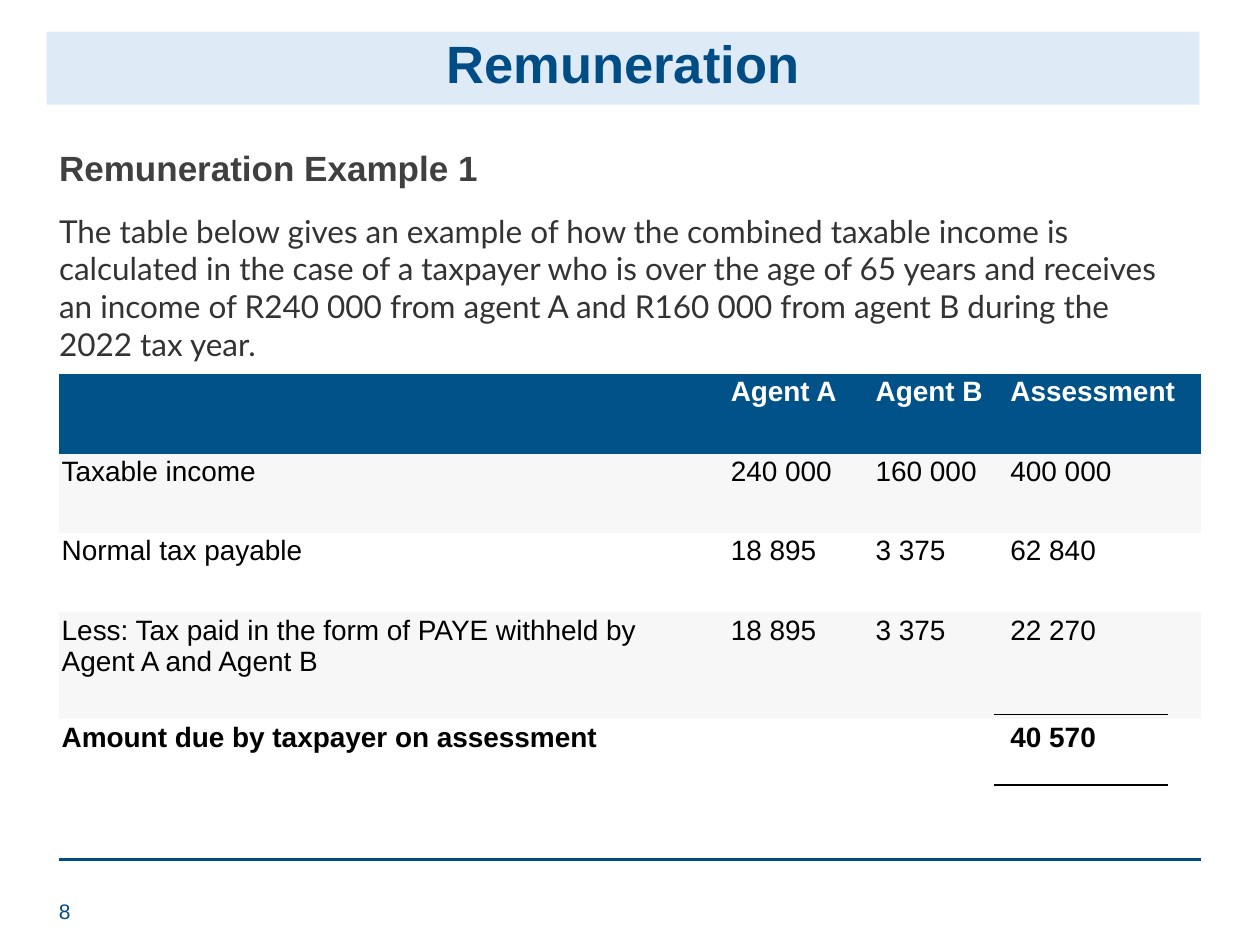
"""Build the Remuneration slide with its worked tax table."""
from dataclasses import dataclass

from lxml.etree import SubElement
from pptx import Presentation
from pptx.dml.color import RGBColor
from pptx.enum.shapes import MSO_CONNECTOR as Connector, MSO_SHAPE as Shape
from pptx.enum.text import MSO_ANCHOR as Anchor, PP_ALIGN as Align
from pptx.oxml.ns import qn
from pptx.slide import Slide
from pptx.text.text import TextFrame
from pptx.util import Inches, Pt

COLORS = {
    "navy": "004C85", "header": "015289", "banner": "DEEBF7", "heading": "404040",
    "body": "333333", "band": "F7F7F7", "white": "FFFFFF", "black": "000000",
}
NO_GRID_STYLE = "{2D5ABB26-0587-4C30-8999-92F81FD0307C}"
COLUMN_WIDTHS = (5.31, 1.15, 1.07, 1.53)
ROW_HEIGHTS = (0.63, 0.63, 0.63, 0.85, 0.63)
CELL_MARGIN = Inches(0.02)


@dataclass
class TextStyle:
    size: float
    color: str
    font: str = "Arial"
    bold: bool = False
    align: Align = Align.LEFT
    anchor: Anchor = Anchor.TOP
    spacing: float = 1.0


@dataclass
class Block:
    text: str
    box: tuple[float, float, float, float]
    style: TextStyle
    fill: str | None = None


@dataclass
class Rule:
    left: float
    right: float
    y: float
    color: str
    weight: float


@dataclass
class TaxRow:
    cells: tuple[str, str, str, str]
    fill: str
    color: str = "black"
    bold: bool = False


BLOCKS = [
    Block("8", (0.37, 7.03, 0.46, 0.4), TextStyle(12, "navy", anchor=Anchor.MIDDLE)),
    Block("The table below gives an example of how the combined taxable income is "
          "calculated in the case of a taxpayer who is over the age of 65 years and "
          "receives an income of R240 000 from agent A and R160 000 from agent B "
          "during the 2022 tax year.",
          (0.37, 1.63, 9.15, 5.03), TextStyle(18, "body", "Lato")),
    Block("Remuneration Example 1", (0.37, 1.15, 8.62, 0.48),
          TextStyle(20, "heading", bold=True, spacing=0.9)),
    Block("Remuneration", (0.37, 0.25, 9.15, 0.58),
          TextStyle(30, "navy", bold=True, align=Align.CENTER, spacing=0.9), "banner"),
]
TAX_ROWS = [
    TaxRow(("", "Agent A", "Agent B", "Assessment"), "header", "white", True),
    TaxRow(("Taxable income", "240 000", "160 000", "400 000"), "band"),
    TaxRow(("Normal tax payable", "18 895", "3 375", "62 840"), "white"),
    TaxRow(("Less: Tax paid in the form of PAYE withheld by\vAgent A and Agent B",
            "18 895", "3 375", "22 270"), "band"),
    TaxRow(("Amount due by taxpayer on assessment", "", "", "40 570"), "white", bold=True),
]
RULES = [
    Rule(0.47, 9.53, 6.82, "navy", 2),
    Rule(7.89, 9.27, 5.67, "black", 0.5),
    Rule(7.89, 9.27, 6.23, "black", 1.5),
]


def rgb(name: str) -> RGBColor:
    return RGBColor.from_string(COLORS[name])


def write_text(frame: TextFrame, text: str, style: TextStyle) -> None:
    frame.text = text
    paragraph = frame.paragraphs[0]
    paragraph.alignment = style.align
    paragraph.line_spacing = style.spacing
    paragraph.font.size = Pt(style.size)
    for run in paragraph.runs:
        run.font.name = style.font
        run.font.size = Pt(style.size)
        run.font.bold = style.bold
        run.font.color.rgb = rgb(style.color)


def draw_block(slide: Slide, block: Block) -> None:
    box = [Inches(length) for length in block.box]
    if block.fill:
        holder = slide.shapes.add_shape(Shape.RECTANGLE, *box)
        holder.shadow.inherit = False
        holder.fill.solid()
        holder.fill.fore_color.rgb = rgb(block.fill)
        holder.line.fill.background()
    else:
        holder = slide.shapes.add_textbox(*box)
    frame = holder.text_frame
    frame.word_wrap = True
    frame.vertical_anchor = block.style.anchor
    write_text(frame, block.text, block.style)


def draw_rule(slide: Slide, rule: Rule) -> None:
    y = Inches(rule.y)
    line = slide.shapes.add_connector(
        Connector.STRAIGHT, Inches(rule.left), y, Inches(rule.right), y)
    line.line.color.rgb = rgb(rule.color)
    line.line.width = Pt(rule.weight)
    SubElement(line._element.spPr, qn("a:effectLst"))


def draw_tax_table(slide: Slide, rows: list[TaxRow]) -> None:
    table = slide.shapes.add_table(
        len(rows), len(COLUMN_WIDTHS), Inches(0.47), Inches(2.97),
        Inches(sum(COLUMN_WIDTHS)), Inches(sum(ROW_HEIGHTS))).table
    table._tbl.tblPr.find(qn("a:tableStyleId")).text = NO_GRID_STYLE
    table.first_row = table.horz_banding = False
    for column, width in zip(table.columns, COLUMN_WIDTHS):
        column.width = Inches(width)
    for table_row, height, tax_row in zip(table.rows, ROW_HEIGHTS, rows):
        table_row.height = Inches(height)
        style = TextStyle(16, tax_row.color, bold=tax_row.bold)
        for cell, text in zip(table_row.cells, tax_row.cells):
            cell.margin_left = cell.margin_right = CELL_MARGIN
            cell.margin_top = cell.margin_bottom = CELL_MARGIN
            cell.fill.solid()
            cell.fill.fore_color.rgb = rgb(tax_row.fill)
            write_text(cell.text_frame, text, style)


def main() -> None:
    deck = Presentation()
    deck.slide_width, deck.slide_height = Inches(10), Inches(7.5)
    slide = deck.slides.add_slide(deck.slide_layouts[6])
    for block in BLOCKS:
        draw_block(slide, block)
    draw_tax_table(slide, TAX_ROWS)
    for rule in RULES:
        draw_rule(slide, rule)
    deck.save("out.pptx")


if __name__ == "__main__":
    main()
